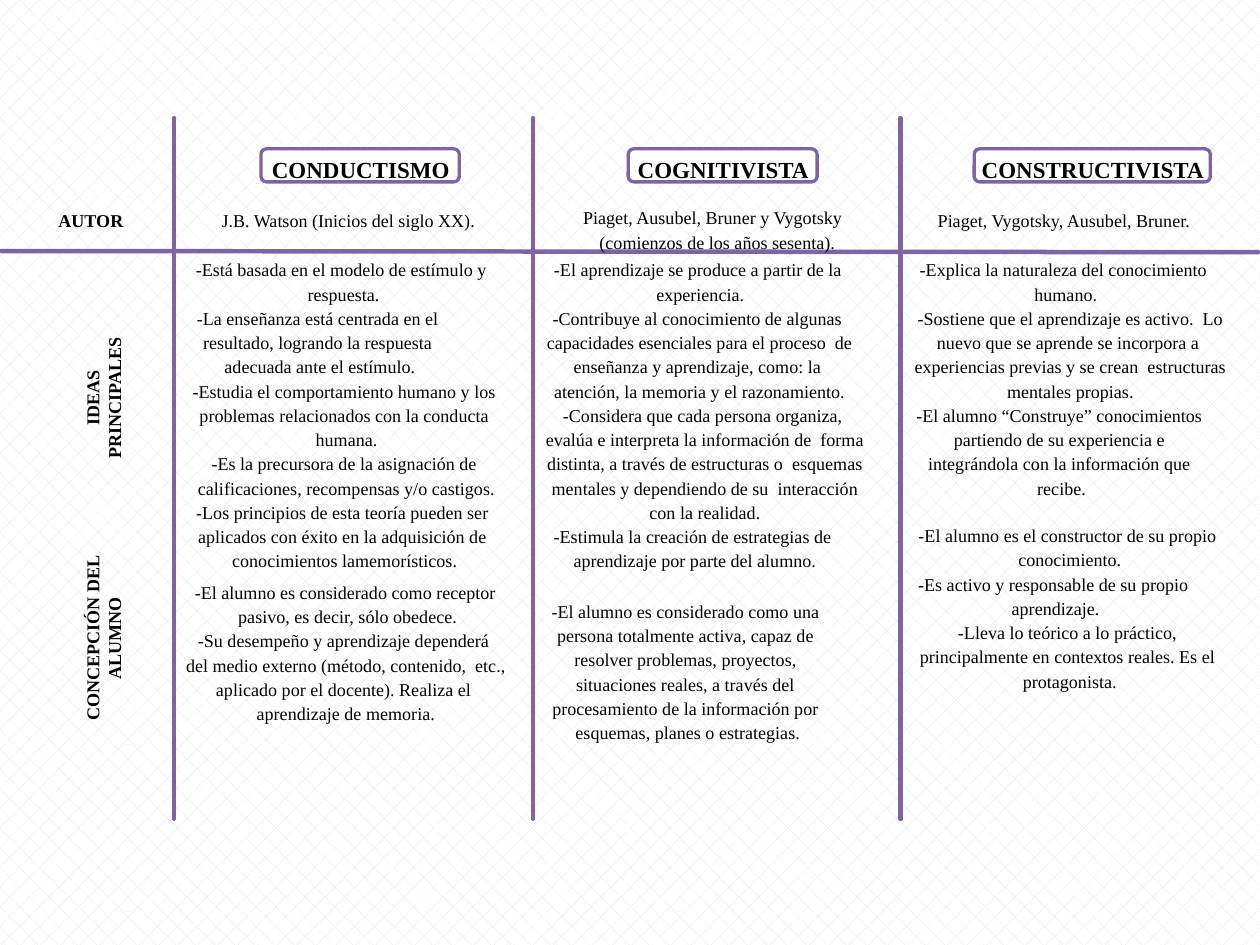
from pptx import Presentation
from pptx.dml.color import RGBColor
from pptx.enum.dml import MSO_PATTERN
from pptx.enum.shapes import MSO_SHAPE
from pptx.enum.text import MSO_ANCHOR, MSO_AUTO_SIZE, PP_ALIGN
from pptx.util import Pt

PX = 9144  # 100 px to the inch
BLACK = RGBColor(0x00, 0x00, 0x00)
WHITE = RGBColor(0xFF, 0xFF, 0xFF)
PURPLE = RGBColor(0x80, 0x64, 0xA2)
LILAC = RGBColor(0xE6, 0xE0, 0xEC)


class ComparisonSlide:
    font = {"name": "Times New Roman", "size": Pt(11), "bold": False}
    heading_font = {**font, "size": Pt(14), "bold": True}
    label_font = {**font, "bold": True}

    def __init__(self, deck):
        self.page = deck.slides.add_slide(deck.slide_layouts[6])
        fill = self.page.background.fill
        fill.patterned()
        fill.pattern = MSO_PATTERN.DIAGONAL_BRICK
        fill.fore_color.rgb, fill.back_color.rgb = LILAC, WHITE

    def paint(self, shape):
        shape.shadow.inherit = False
        shape.fill.solid()
        shape.fill.fore_color.rgb = WHITE
        shape.line.color.rgb = PURPLE
        shape.line.width = Pt(2)

    def fill_text(self, box, paragraphs, font, top=2, spacing=None, left=1, indent=0):
        """Each paragraph is a (text, right margin in px) pair."""
        frame = box.text_frame
        layout = {"margin_left": 0, "margin_right": 0, "margin_bottom": 0,
                  "margin_top": top * PX, "word_wrap": True,
                  "vertical_anchor": MSO_ANCHOR.TOP,
                  "auto_size": MSO_AUTO_SIZE.SHAPE_TO_FIT_TEXT}
        for name, value in layout.items():
            setattr(frame, name, value)
        for number, (text, right) in enumerate(paragraphs):
            para = frame.add_paragraph() if number else frame.paragraphs[0]
            para.alignment = PP_ALIGN.CENTER
            para.line_spacing = spacing
            margins = {"marL": left, "marR": right, "indent": indent}
            for name, value in margins.items():
                para._p.get_or_add_pPr().set(name, str(value * PX))
            span = para.add_run()
            span.text = text
            for name, value in font.items():
                setattr(span.font, name, value)
            span.font.color.rgb = BLACK

    def text(self, x, y, width, height, paragraphs, font=None, **options):
        box = self.page.shapes.add_textbox(x * PX, y * PX, width * PX, height * PX)
        self.fill_text(box, paragraphs, font or self.font, **options)
        return box

    def row_label(self, y, height, text):
        box = self.text(69, y, 37, height, [(text, 0)], self.label_font, top=0)
        box.text_frame._txBody.bodyPr.set("vert", "vert270")

    def heading(self, x, width, text):
        box = self.page.shapes.add_shape(
            MSO_SHAPE.ROUNDED_RECTANGLE, x * PX, 126 * PX, width * PX, 28 * PX)
        self.paint(box)
        self.fill_text(box, [(text, 0)], self.heading_font, top=4)

    def rules(self, outlines):
        builder = self.page.shapes.build_freeform(*outlines[0][0], scale=PX)
        for number, (start, *others) in enumerate(outlines):
            if number:
                builder.move_to(*start)
            builder.add_line_segments(others, close=True)
        self.paint(builder.convert_to_shape())


HEADINGS = [(221, 168, "CONDUCTISMO"), (532, 160, "COGNITIVISTA"),
            (825, 200, "CONSTRUCTIVISTA")]

IDEAS = [
    (156, 274, 272, [
        ("-Está basada en el modelo de estímulo y  respuesta.", 5),
        ("-La enseñanza está centrada en el  resultado, logrando la respuesta  "
         "adecuada ante el estímulo.", 45),
        ("-Estudia el comportamiento humano y los  problemas relacionados con la "
         "conducta  humana.", 0),
        ("-Es la precursora de la asignación de  calificaciones, recompensas y/o "
         "castigos.", 0),
        ("-Los principios de esta teoría pueden ser  aplicados con éxito en la "
         "adquisición de  conocimientos lamemorísticos.", 3)]),
    (459, 275, 272, [
        ("-El aprendizaje se produce a partir de la  experiencia.", 8),
        ("-Contribuye al conocimiento de algunas  capacidades esenciales para el "
         "proceso  de enseñanza y aprendizaje, como: la  atención, la memoria y el "
         "razonamiento.", 9),
        ("-Considera que cada persona organiza,  evalúa e interpreta la información "
         "de  forma distinta, a través de estructuras o  esquemas mentales y "
         "dependiendo de su  interacción con la realidad.", 0),
        ("-Estimula la creación de estrategias de  aprendizaje por parte del "
         "alumno.", 17)]),
    (772, 268, 209, [
        ("-Explica la naturaleza del conocimiento  humano.", 8),
        ("-Sostiene que el aprendizaje es activo.  Lo nuevo que se aprende se "
         "incorpora a  experiencias previas y se crean  estructuras mentales "
         "propias.", 0),
        ("-El alumno “Construye” conocimientos  partiendo de su experiencia e  "
         "integrándola con la información que  recibe.", 15)]),
]

STUDENT = [
    (156, 488, 276, 125, [
        ("-El alumno es considerado como receptor  pasivo, es decir, sólo "
         "obedece.", 0),
        ("-Su desempeño y aprendizaje dependerá  del medio externo (método, "
         "contenido,  etc., aplicado por el docente). Realiza el  aprendizaje de "
         "memoria.", 3)]),
    (459, 504, 246, 125, [
        ("-El alumno es considerado como una  persona totalmente activa, capaz de  "
         "resolver problemas, proyectos,  situaciones reales, a través del  "
         "procesamiento de la información por  esquemas, planes o estrategias.", 0)]),
    (769, 440, 273, 146, [
        ("-El alumno es el constructor de su propio  conocimiento.", 0),
        ("-Es activo y responsable de su propio  aprendizaje.", 24),
        ("-Lleva lo teórico a lo práctico,  principalmente en contextos reales. Es "
         "el  protagonista.", 0)]),
]


def main():
    deck = Presentation()
    deck.slide_width, deck.slide_height = 1067 * PX, 800 * PX
    slide = ComparisonSlide(deck)

    # Column headings
    for x, width, title in HEADINGS:
        slide.heading(x, width, title)

    # Grid rules: three columns, then the row under the authors
    slide.rules([[(x, 100), (x + 1, 100), (x + 1, 694), (x, 694)]
                 for x in (147, 451, 762)])
    slide.rules([[(-1, 212), (1066, 213), (1066, 214), (-1, 213)]])

    # Row labels
    slide.text(45, 175, 63, 20, [("AUTOR", 0)], slide.label_font)
    slide.row_label(263, 149, "IDEAS PRINCIPALES")
    slide.row_label(440, 202, "CONCEPCIÓN DEL ALUMNO")

    # Authors
    slide.text(182, 175, 225, 20, [("J.B. Watson (Inicios del siglo XX).", 0)])
    slide.text(488, 171, 234, 42, [("Piaget, Ausubel, Bruner y Vygotsky  "
                                    "(comienzos de los años sesenta).", 0)],
               spacing=1.12, left=5, indent=-4)
    slide.text(785, 175, 231, 20, [("Piaget, Vygotsky, Ausubel, Bruner.", 0)])

    # Main ideas and view of the student
    for x, width, height, paragraphs in IDEAS:
        slide.text(x, 215, width, height, paragraphs, spacing=1.12)
    for x, y, width, height, paragraphs in STUDENT:
        slide.text(x, y, width, height, paragraphs, spacing=1.12)

    deck.save("out.pptx")


if __name__ == "__main__":
    main()
